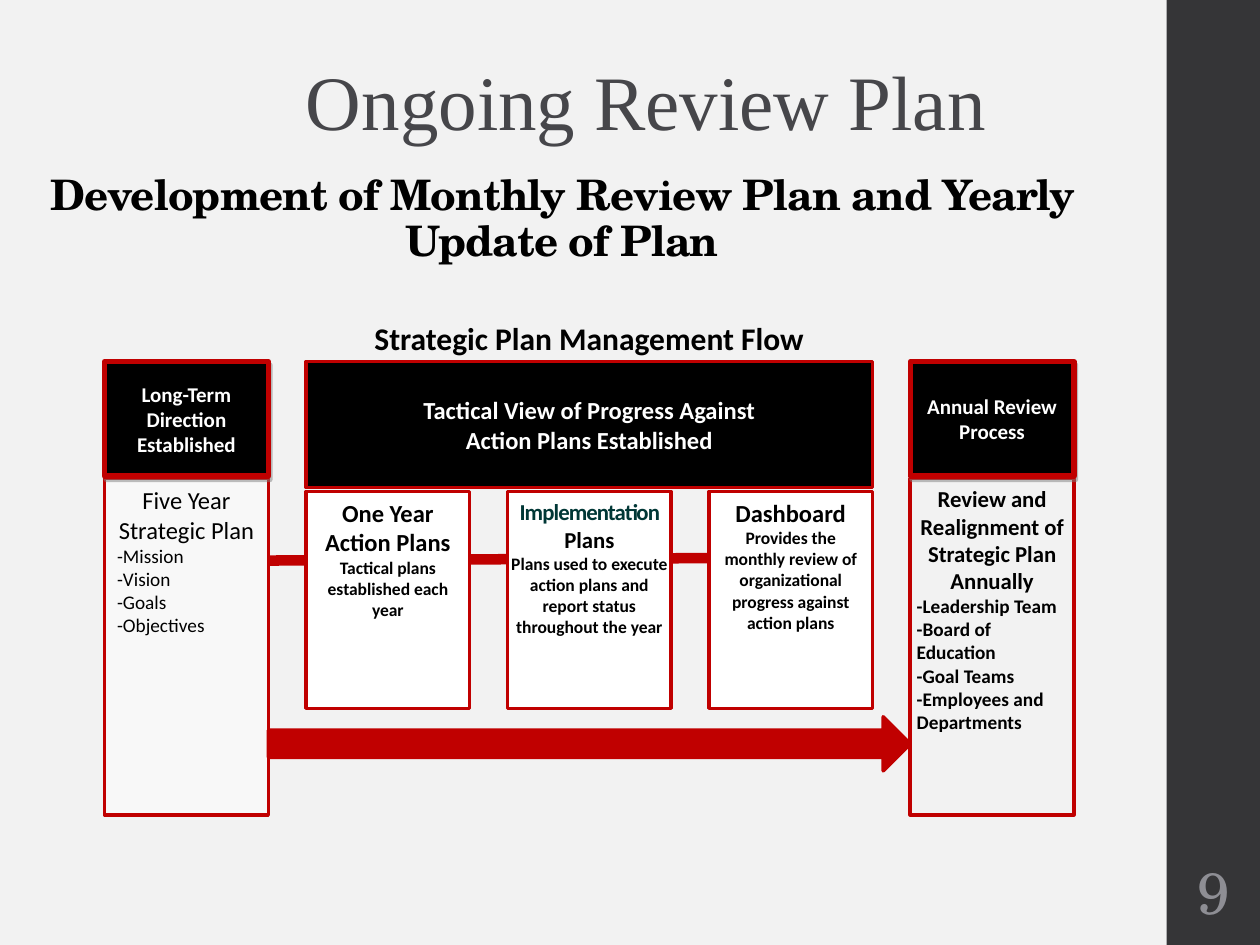
from dataclasses import dataclass
from typing import Optional

from lxml.etree import SubElement
from pptx import Presentation
from pptx.dml.color import RGBColor
from pptx.enum.shapes import MSO_CONNECTOR, MSO_SHAPE
from pptx.enum.text import MSO_ANCHOR, MSO_AUTO_SIZE, PP_ALIGN
from pptx.oxml.ns import qn
from pptx.util import Cm, Pt

RED = RGBColor(0xC0, 0x00, 0x00)
BLACK = RGBColor(0x00, 0x00, 0x00)
WHITE = RGBColor(0xFF, 0xFF, 0xFF)
PAPER = RGBColor(0xF2, 0xF2, 0xF2)
DARK = RGBColor(0x35, 0x35, 0x37)
SLATE = RGBColor(0x46, 0x46, 0x4A)
SILVER = RGBColor(0x8E, 0x8E, 0x94)
TEAL = RGBColor(0x00, 0x37, 0x36)

SCHOLA = "TeX Gyre Schola"
LEFT, PITCH, WIDE = 2.11, 4.06, 3.3
HEAD_TOP, TALL_TOP, CARD_TOP = 7.29, 9.65, 9.91
TIGHT = (0.13, 0.13)
LOOSE = (0.25, 0.13)


@dataclass
class Run:
    text: str
    size: float
    color: RGBColor = BLACK
    bold: bool = True
    font: str = "Calibri"
    space: int = 0


@dataclass
class Para:
    runs: list[Run]
    align: PP_ALIGN = PP_ALIGN.CENTER


@dataclass
class Box:
    left: float
    top: float
    width: float
    height: float
    paras: list[Para]
    fill: Optional[RGBColor] = None
    alpha: int = 100
    line: float = 2
    inset: tuple[float, float] = LOOSE
    anchor: MSO_ANCHOR = MSO_ANCHOR.TOP
    shadow: bool = False
    kind: MSO_SHAPE = MSO_SHAPE.RECTANGLE


def center(text: str, size: float, **style) -> Para:
    return Para([Run(text, size, **style)])


def items(names: list[str], bold: bool) -> list[Para]:
    return [Para([Run(f"-{name}", 11, bold=bold)], PP_ALIGN.LEFT) for name in names]


def column(index: int) -> float:
    return LEFT + PITCH * index


def write(frame, paras: list[Para], anchor: MSO_ANCHOR, inset=LOOSE) -> None:
    frame.word_wrap = True
    frame.auto_size = MSO_AUTO_SIZE.NONE
    frame.vertical_anchor = anchor
    frame.margin_left = frame.margin_right = Cm(inset[0])
    frame.margin_top = frame.margin_bottom = Cm(inset[1])
    for index, para in enumerate(paras):
        line = frame.add_paragraph() if index else frame.paragraphs[0]
        line.alignment = para.align
        for item in para.runs:
            run = line.add_run()
            run.text = item.text
            run.font.name = item.font
            run.font.size = Pt(item.size)
            run.font.bold = item.bold
            run.font.color.rgb = item.color
            if item.space:
                run.font._element.set("spc", str(item.space))


def add_text(slide, left, top, width, height, para: Para,
             anchor=MSO_ANCHOR.MIDDLE, inset=LOOSE) -> None:
    label = slide.shapes.add_textbox(Cm(left), Cm(top), Cm(width), Cm(height))
    write(label.text_frame, [para], anchor, inset)


def add_alpha(color, value: int) -> None:
    SubElement(color, qn("a:alpha")).set("val", str(value * 1000))


def add_shadow(shape) -> None:
    effects = shape._element.spPr.find(qn("a:effectLst"))
    outer = SubElement(effects, qn("a:outerShdw"), blurRad="0",
                       dist=str(Pt(2.2)), dir=str(63 * 60000))
    add_alpha(SubElement(outer, qn("a:srgbClr"), val="808080"), 50)


def add_box(slide, box: Box) -> None:
    shape = slide.shapes.add_shape(box.kind, Cm(box.left), Cm(box.top),
                                   Cm(box.width), Cm(box.height))
    shape.shadow.inherit = False
    if box.fill is None:
        shape.fill.background()
    else:
        shape.fill.solid()
        shape.fill.fore_color.rgb = box.fill
    if box.alpha < 100:
        add_alpha(shape._element.spPr.find(qn("a:solidFill"))[0], box.alpha)
    if box.line:
        shape.line.color.rgb = RED
        shape.line.width = Pt(box.line)
    else:
        shape.line.fill.background()
    if box.shadow:
        add_shadow(shape)
    if box.paras:
        write(shape.text_frame, box.paras, box.anchor, box.inset)


def add_link(slide, left, top, right, base) -> None:
    link = slide.shapes.add_connector(MSO_CONNECTOR.STRAIGHT, Cm(left), Cm(top),
                                      Cm(right), Cm(base))
    link.line.color.rgb = RED
    link.line.width = Pt(6)
    SubElement(link._element.spPr, qn("a:effectLst"))


def tall(index: int, paras: list[Para], **style) -> Box:
    return Box(column(index), TALL_TOP, WIDE, 6.78, paras, **style)


def head(index: int, text: str, inset=LOOSE) -> Box:
    return Box(column(index), HEAD_TOP, WIDE, 2.31, [center(text, 12, color=WHITE)],
               BLACK, line=3, inset=inset, anchor=MSO_ANCHOR.MIDDLE, shadow=True)


def card(index: int, title: Para, text: str, side: float) -> Box:
    return Box(column(index), CARD_TOP, WIDE, 4.37, [title, center(text, 10)],
               WHITE, inset=(side, 0.13))


def main() -> None:
    deck = Presentation()
    deck.slide_width, deck.slide_height = Cm(25.4), Cm(19.05)
    slide = deck.slides.add_slide(deck.slide_layouts[5])
    slide.background.fill.solid()
    slide.background.fill.fore_color.rgb = PAPER

    title = slide.shapes.title
    title.left, title.top, title.width, title.height = Cm(0), Cm(2.74), Cm(22.66), Cm(2.74)
    write(title.text_frame,
          [center("Development of Monthly Review Plan and Yearly Update of Plan", 24,
                  font=SCHOLA, space=-50)], MSO_ANCHOR.BOTTOM)
    title.text_frame.paragraphs[0].line_spacing = 0.9

    add_box(slide, Box(23.52, 0, 1.88, 19.05, [], DARK, line=0))
    add_text(slide, 1.7, 0.64, 22.66, 2.74,
             center("Ongoing Review Plan", 44, color=SLATE, bold=False,
                    font="Times New Roman"))
    add_text(slide, 23.52, 17.15, 1.9, 1.65,
             center("9", 33.3, color=SILVER, bold=False, font=SCHOLA), inset=TIGHT)

    add_link(slide, column(0) + WIDE, 11.3, column(3), 11.25)
    goals = items(["Mission", "Vision", "Goals", "Objectives"], False)
    teams = items(["Leadership Team", "Board of Education", "Goal Teams",
                   "Employees and Departments"], True)
    plans = Para([Run("Implementation ", 13, TEAL, space=-50), Run("Plans", 13)])
    boxes = [
        tall(0, [center("Five Year Strategic Plan", 14, bold=False), *goals],
             fill=WHITE, alpha=50),
        head(0, "Long-Term Direction Established"),
        card(3, center("Dashboard", 14),
             "Provides the monthly review of organizational progress against action plans",
             0.13),
        Box(column(1), HEAD_TOP, 2 * PITCH + WIDE, 2.54,
            [center("Tactical View of Progress Against", 14, color=WHITE),
             center("Action Plans Established", 14, color=WHITE)],
            BLACK, anchor=MSO_ANCHOR.MIDDLE),
        tall(4, [center("Review and Realignment of Strategic Plan Annually", 13), *teams],
             inset=TIGHT),
        head(4, "Annual Review Process", TIGHT),
        Box(column(0) + WIDE, 14.45, 4 * PITCH - WIDE, 1.09, [], RED,
            kind=MSO_SHAPE.RIGHT_ARROW),
        card(1, center("One Year Action Plans", 14),
             "Tactical plans established each year", 0.08),
        card(2, plans,
             "Plans used to execute action plans and report status throughout the year",
             0.03),
    ]
    for box in boxes:
        add_box(slide, box)
    add_text(slide, LEFT, 6.3, 4 * PITCH + WIDE, 1.17,
             center("Strategic Plan Management Flow", 18), MSO_ANCHOR.TOP)
    deck.save("out.pptx")


if __name__ == "__main__":
    main()
